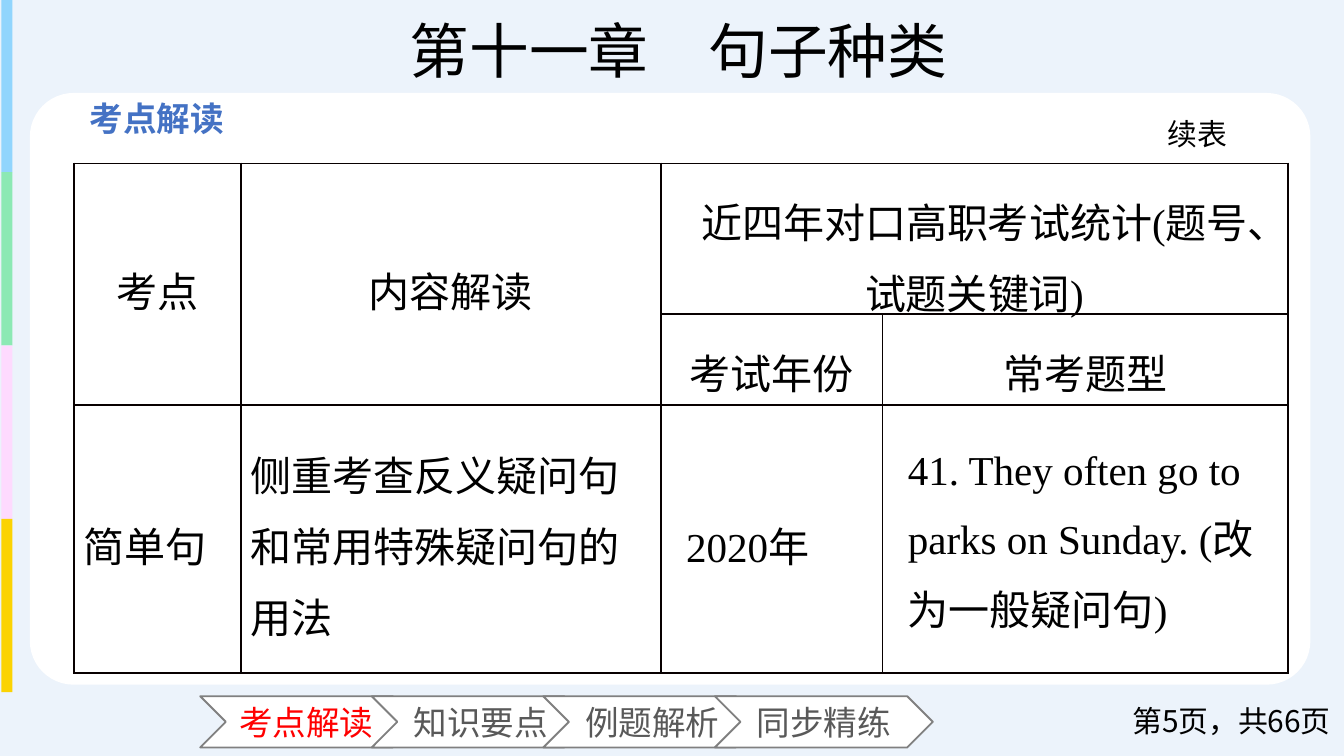
from dataclasses import dataclass

from lxml.etree import SubElement
from pptx import Presentation
from pptx.dml.color import RGBColor
from pptx.enum.shapes import MSO_SHAPE
from pptx.enum.text import MSO_ANCHOR, PP_ALIGN
from pptx.oxml.ns import qn
from pptx.util import Pt


@dataclass(frozen=True)
class Theme:
    sans: str = "Noto Sans CJK SC"
    serif: str = "Times New Roman"
    back: str = "ECF3FB"
    white: str = "FFFFFF"
    black: str = "000000"
    blue: str = "4472C4"
    red: str = "FF0000"
    gray: str = "595959"
    edge: str = "808080"
    rule: str = "080000"
    bands: tuple = ("91D5FD", "8CE9B4", "FEDAFE", "FBD302")
    title: int = 32
    cell: int = 22
    label: int = 18
    note: int = 16


THEME = Theme()


def color(code):
    return RGBColor.from_string(code)


def style(frame, size, tint, face=THEME.sans, align=PP_ALIGN.LEFT, bold=False):
    for para in frame.paragraphs:
        para.alignment = align
        for run in para.runs:
            font = run.font
            font.name, font.size, font.bold = face, Pt(size), bold
            font.color.rgb = color(tint)
            SubElement(font._element, qn("a:ea"), typeface=THEME.sans)


def block(slide, kind, box, fill, line=None):
    shape = slide.shapes.add_shape(kind, *map(Pt, box))
    shape.shadow.inherit = False
    shape.fill.solid()
    shape.fill.fore_color.rgb = color(fill)
    if line:
        shape.line.color.rgb = color(line)
        shape.line.width = Pt(1)
    else:
        shape.line.fill.background()
    return shape


def label(slide, box, text, size, tint, anchor=MSO_ANCHOR.TOP, **look):
    frame = slide.shapes.add_textbox(*map(Pt, box)).text_frame
    frame.word_wrap = True
    frame.vertical_anchor = anchor
    frame.text = text
    style(frame, size, tint, **look)


def stripe(slide, box):
    left, top, width, height = box
    step = height / len(THEME.bands)
    for i, tint in enumerate(THEME.bands):
        block(slide, MSO_SHAPE.RECTANGLE, (left, top + i * step, width, step), tint)


def panel(slide, box):
    card = block(slide, MSO_SHAPE.ROUNDED_RECTANGLE, box, THEME.white)
    card.adjustments[0] = 0.074


def steps(slide, box, names):
    left, top, width, height = box
    pitch = 91.9
    size = width - pitch * (len(names) - 1)
    for i, name in enumerate(names):
        spot = (left + i * pitch, top, size, height)
        arrow = block(slide, MSO_SHAPE.CHEVRON, spot, THEME.white, THEME.edge)
        frame = arrow.text_frame
        frame.vertical_anchor = MSO_ANCHOR.MIDDLE
        frame.text = name
        tint, align = (THEME.gray, PP_ALIGN.CENTER) if i else (THEME.red, PP_ALIGN.JUSTIFY)
        style(frame, THEME.label, tint, align=align)


def border(cell):
    props = cell._tc.get_or_add_tcPr()
    for side in ("lnL", "lnR", "lnT", "lnB"):
        line = SubElement(props, qn(f"a:{side}"), w=str(Pt(1)))
        fill = SubElement(line, qn("a:solidFill"))
        SubElement(fill, qn("a:srgbClr"), val=THEME.rule)
    cell.fill.background()


def grid(slide, box, cols, rows, texts, spans):
    table = slide.shapes.add_table(len(rows), len(cols), *map(Pt, box)).table
    table.first_row = table.horz_banding = False
    for col, width in zip(table.columns, cols):
        col.width = Pt(width)
    for row, height in zip(table.rows, rows):
        row.height = Pt(height)
    for start, end in spans:
        table.cell(*start).merge(table.cell(*end))
    last = len(rows) - 1
    for r in range(len(rows)):
        for c in range(len(cols)):
            cell = table.cell(r, c)
            border(cell)
            if (r, c) not in texts:
                continue
            # Only the first two body cells are tight
            side, edge = (7.2 / 1.4, 0) if r == last and c < 2 else (13.5, 8.5)
            cell.margin_left = cell.margin_right = Pt(side)
            cell.margin_top = cell.margin_bottom = Pt(edge)
            cell.vertical_anchor = MSO_ANCHOR.MIDDLE
            frame = cell.text_frame
            frame.text = texts[r, c]
            frame.paragraphs[0].line_spacing = 1.2
            align = PP_ALIGN.LEFT if r == last else PP_ALIGN.CENTER
            style(frame, THEME.cell, THEME.black, THEME.serif, align)


def main():
    deck = Presentation()
    deck.slide_width, deck.slide_height = Pt(720), Pt(405)
    slide = deck.slides.add_slide(deck.slide_layouts[6])

    # Backdrop
    block(slide, MSO_SHAPE.RECTANGLE, (0, 0, 720, 405), THEME.back)
    stripe(slide, (0.7, -0.7, 6, 371.6))
    panel(slide, (16, 49.8, 686, 317))

    # Headings
    label(slide, (41, 49, 104.4, 24.5), "考点解读", THEME.label, THEME.blue, bold=True)
    label(slide, (126.7, 3.6, 473.8, 46), "第十一章　句子种类", THEME.title,
          THEME.black, face=THEME.serif, align=PP_ALIGN.CENTER)

    # Exam table
    texts = {
        (0, 0): "考点",
        (0, 1): "内容解读",
        (0, 2): "近四年对口高职考试统计(题号、试题关键词)",
        (1, 2): "考试年份",
        (1, 3): "常考题型",
        (2, 0): "简单句",
        (2, 1): "侧重考查反义疑问句和常用特殊疑问句的用法",
        (2, 2): "2020年",
        (2, 3): "41. They often go to parks on Sunday. (改为一般疑问句)",
    }
    spans = [((0, 0), (1, 0)), ((0, 1), (1, 1)), ((0, 2), (0, 3))]
    grid(slide, (39.8, 87.6, 650.1, 272.5), (89.3, 225, 118.8, 217),
         (80.6, 48.3, 143.6), texts, spans)
    label(slide, (618.5, 58.3, 55.4, 19.4), "续表", THEME.note, THEME.black)

    # Footer
    steps(slide, (107.3, 373, 392.5, 27.4), ["考点解读", "知识要点", "例题解析", "同步精练"])
    label(slide, (573.8, 375, 146.2, 21.6), "第5页，共66页", THEME.note,
          THEME.black, MSO_ANCHOR.MIDDLE, align=PP_ALIGN.RIGHT)

    deck.save("out.pptx")


if __name__ == "__main__":
    main()
